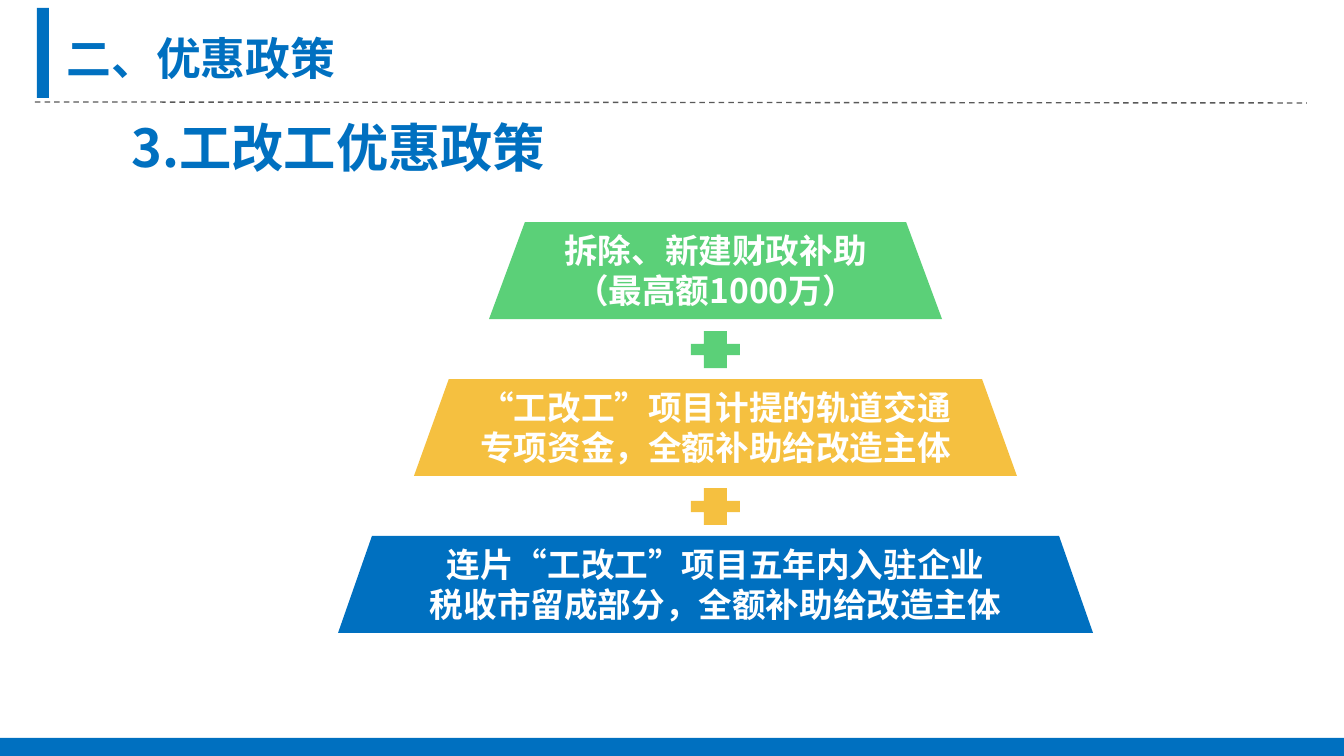
import pptx
import pptx.util
import pptx.dml.color
import pptx.enum.dml
import pptx.enum.lang
import pptx.enum.shapes
import pptx.enum.text
import pptx.oxml
import pptx.oxml.ns

SHAPE = pptx.enum.shapes.MSO_SHAPE
ALIGN = pptx.enum.text.PP_ALIGN
RGB = pptx.dml.color.RGBColor
BLUE = RGB(0x00, 0x70, 0xC0)
GREEN = RGB(0x5B, 0xD0, 0x78)
AMBER = RGB(0xF5, 0xC0, 0x40)
GREY = RGB(0x59, 0x59, 0x59)
WHITE = RGB(0xFF, 0xFF, 0xFF)
FONT = "Noto Sans CJK SC"

TITLE = "二、优惠政策"
HEADING = "3.工改工优惠政策"
# colour, trapezoid width, slant, text width, paragraphs
TIERS = [
    (GREEN, 453, 0.37, 389, ["拆除、新建财政补助", "（最高额1000万）"]),
    (AMBER, 603, 0.36, 499, ["“工改工”项目计提的轨道交通专项资金，全额补助给改造主体"]),
    (BLUE, 755, 0.35, 635, ["连片“工改工”项目五年内入驻企业", "税收市留成部分，全额补助给改造主体"]),
]
FIRST_TOP, TIER_STEP, TIER_HEIGHT = 222, 157, 97
TWICE_CENTRE = 1431
PLUS_WIDTH, PLUS_HEIGHT, PLUS_OFFSET = 49, 37, 109


def px(length):
    return pptx.util.Emu(round(length * 914400 / 134.4))


def centred(width):
    """Left edge of an item of this width on the pyramid's axis."""
    return (TWICE_CENTRE - width) // 2


def add_block(shapes, kind, left, top, width, height, colour, slant=None):
    block = shapes.add_shape(kind, px(left), px(top), px(width), px(height))
    block.shadow.inherit = False
    block.fill.solid()
    block.fill.fore_color.rgb = colour
    block.line.fill.background()
    if slant is not None:
        block.adjustments[0] = slant
    return block


def write(box, paragraphs, size, colour, align=ALIGN.CENTER):
    frame = box.text_frame
    frame.word_wrap = True
    frame.auto_size = pptx.enum.text.MSO_AUTO_SIZE.NONE
    frame.vertical_anchor = pptx.enum.text.MSO_ANCHOR.TOP
    for index, text in enumerate(paragraphs):
        para = frame.add_paragraph() if index else frame.paragraphs[0]
        para.alignment = align
        span = para.add_run()
        span.text = text
        span.font.name = FONT
        span.font.size = pptx.util.Pt(size)
        span.font.bold = True
        span.font.color.rgb = colour
        span.font.language_id = pptx.enum.lang.MSO_LANGUAGE_ID.SIMPLIFIED_CHINESE
        east_asian = pptx.oxml.parse_xml(
            f'<a:ea {pptx.oxml.ns.nsdecls("a")} typeface="{FONT}"/>')
        span.font._element.find(pptx.oxml.ns.qn("a:latin")).addnext(east_asian)


def add_text(shapes, left, top, width, height, paragraphs, **style):
    box = shapes.add_textbox(px(left), px(top), px(width), px(height))
    write(box, paragraphs, **style)


def add_divider(shapes):
    line = shapes.add_connector(pptx.enum.shapes.MSO_CONNECTOR.STRAIGHT,
                                px(35), px(102), px(1307), px(103))
    line.line.color.rgb = GREY
    line.line.width = pptx.util.Pt(0.75)
    line.line.dash_style = pptx.enum.dml.MSO_LINE.DASH
    line._element.spPr.append(pptx.oxml.parse_xml(
        f'<a:effectLst {pptx.oxml.ns.nsdecls("a")}/>'))


def main():
    deck = pptx.Presentation()
    deck.slide_width, deck.slide_height = px(1344), px(756)
    page = deck.slides.add_slide(deck.slide_layouts[5])
    shapes = page.shapes

    add_block(shapes, SHAPE.RECTANGLE, 37, 8, 12, 90, BLUE)
    add_divider(shapes)
    add_block(shapes, SHAPE.RECTANGLE, 0, 738, 1344, 18, BLUE)

    title = shapes.title
    title.left, title.top, title.width, title.height = px(53), px(24), px(857), px(68)
    write(title, [TITLE], size=24, colour=BLUE, align=ALIGN.LEFT)

    for index, (colour, width, slant, text_width, paragraphs) in enumerate(TIERS):
        top = FIRST_TOP + index * TIER_STEP
        tier = shapes.add_group_shape().shapes
        add_block(tier, SHAPE.TRAPEZOID, centred(width), top, width, TIER_HEIGHT,
                  colour, slant)
        add_text(tier, centred(text_width), top + 1, text_width, 95, paragraphs,
                 size=18, colour=WHITE)
        if index < len(TIERS) - 1:
            add_block(shapes, SHAPE.CROSS, centred(PLUS_WIDTH), top + PLUS_OFFSET,
                      PLUS_WIDTH, PLUS_HEIGHT, colour, 0.35)

    add_text(shapes, 117, 109, 443, 77, [HEADING], size=28, colour=BLUE)
    deck.save("out.pptx")


if __name__ == "__main__":
    main()
